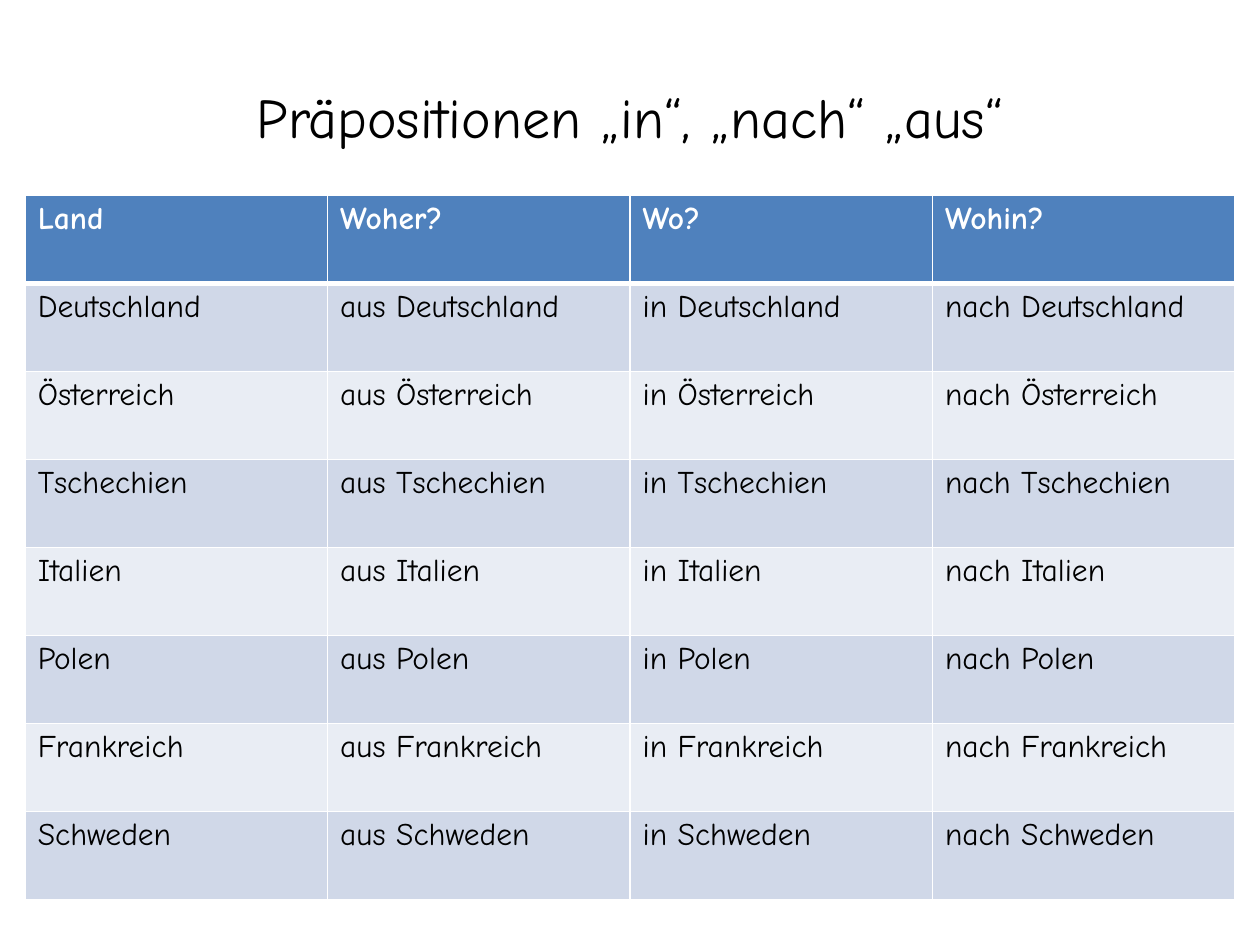
from dataclasses import dataclass

from lxml import etree
from pptx import Presentation
from pptx.dml.color import RGBColor
from pptx.enum import text
from pptx.oxml import ns
from pptx.util import Inches, Pt


@dataclass(frozen=True)
class Theme:
    font: str = "Comic Neue"
    ink: str = "000000"
    white: str = "FFFFFF"
    head: str = "4F81BD"
    bands: tuple = ("D0D8E8", "E9EDF4")
    title: int = 32
    body: int = 18
    thin: int = 1
    thick: int = 3


THEME = Theme()
HEADS = ["Land", "Woher?", "Wo?", "Wohin?"]
PREPS = ["aus", "in", "nach"]
LANDS = ["Deutschland", "Österreich", "Tschechien", "Italien",
         "Polen", "Frankreich", "Schweden"]


def style(para, size, color, bold=False):
    font = para.font
    font.name = THEME.font
    font.size = Pt(size)
    font.bold = bold
    font.color.rgb = RGBColor.from_string(color)


def border(cell, widths):
    props = cell._tc.get_or_add_tcPr()
    for side, width in widths.items():
        line = etree.SubElement(props, ns.qn(f"a:ln{side}"), w=str(Pt(width)))
        fill = etree.SubElement(line, ns.qn("a:solidFill"))
        etree.SubElement(fill, ns.qn("a:srgbClr"), val=THEME.white)


def add_title(slide, box, words):
    frame = slide.shapes.add_textbox(*box).text_frame
    frame.word_wrap = True
    frame.vertical_anchor = text.MSO_ANCHOR.MIDDLE
    para = frame.paragraphs[0]
    para.text = words
    para.alignment = text.PP_ALIGN.CENTER
    style(para, THEME.title, THEME.ink)


def add_grid(slide, box, rows):
    table = slide.shapes.add_table(len(rows), len(rows[0]), *box).table
    for r, row in enumerate(rows):
        head = r == 0
        fill = THEME.head if head else THEME.bands[(r - 1) % 2]
        color = THEME.white if head else THEME.ink
        widths = {"L": THEME.thin, "R": THEME.thin,
                  "T": THEME.thick if r == 1 else THEME.thin,
                  "B": THEME.thick if head else THEME.thin}
        for c, words in enumerate(row):
            cell = table.cell(r, c)
            cell.text = words
            style(cell.text_frame.paragraphs[0], THEME.body, color, head)
            border(cell, widths)
            cell.fill.solid()
            cell.fill.fore_color.rgb = RGBColor.from_string(fill)


def main():
    deck = Presentation()
    deck.slide_width, deck.slide_height = Inches(10), Inches(7.5)
    slide = deck.slides.add_slide(deck.slide_layouts[6])
    add_title(slide, [Inches(n) for n in (0.5, 0.3, 9, 1.25)],
              "Präpositionen „in“, „nach“ „aus“")
    rows = [[land] + [f"{prep} {land}" for prep in PREPS] for land in LANDS]
    add_grid(slide, [Inches(n) for n in (0.2, 1.55, 9.6, 5.59)],
             [HEADS] + rows)
    deck.save("out.pptx")


if __name__ == "__main__":
    main()
